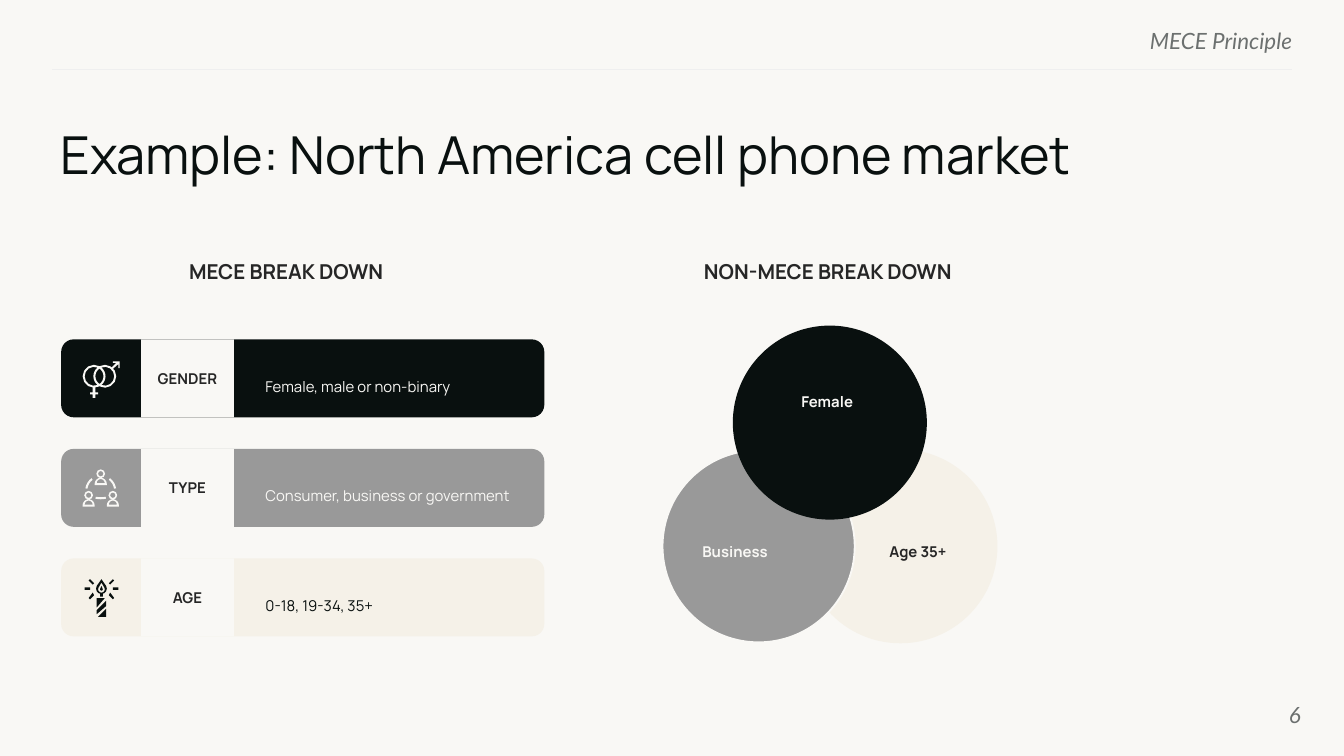
from math import cos, radians, sin

from pptx import Presentation
from pptx.dml.color import RGBColor
from pptx.enum.shapes import MSO_CONNECTOR, MSO_SHAPE as Kind
from pptx.enum.text import MSO_ANCHOR as Anchor, MSO_AUTO_SIZE as Fit, PP_ALIGN as Align
from pptx.oxml.xmlchemy import OxmlElement
from pptx.util import Pt

PX = 4572  # 200 px to the inch
INK, GREY, SAND, PAPER = "09100F", "999999", "F5F1E8", "F9F8F5"
DARK, MUTE, RULE = "262626", "6C706F", "EFEFEF"
hue = RGBColor.from_string

deck = Presentation()
deck.slide_width, deck.slide_height = 2000 * PX, 1125 * PX
slide = deck.slides.add_slide(deck.slide_layouts[5])
slide.background.fill.solid()
slide.background.fill.fore_color.rgb = hue(PAPER)
shapes = slide.shapes


def write(text, box=None, shape=None, size=8, color=DARK, font="Manrope", bold=False,
          italic=False, align=Align.CENTER, anchor=Anchor.TOP, pad=(14, 8), space=None, after=0):
    """Put text in the given shape, or in a new text box."""
    shape = shape or shapes.add_textbox(*[n * PX for n in box])
    frame = shape.text_frame
    frame.word_wrap, frame.auto_size = True, Fit.NONE
    frame.vertical_anchor = anchor
    frame.margin_left = frame.margin_right = pad[0] * PX
    frame.margin_top = frame.margin_bottom = pad[1] * PX
    para = frame.paragraphs[0]
    para.alignment, para.space_after = align, Pt(after)
    if space:
        para.line_spacing = space
    run = para.add_run()
    run.text = text
    run.font.name, run.font.size = font, Pt(size)
    run.font.bold, run.font.italic = bold, italic
    run.font.color.rgb = hue(color)


def arc(x, y, r, start=0, end=360, steps=8):
    """Points along an arc, in degrees clockwise from the right."""
    turns = [radians(start + (end - start) * i / steps) for i in range(steps + 1)]
    return [(x + r * cos(t), y + r * sin(t)) for t in turns]


# Title, header and page number
title = shapes.title
title.left, title.top, title.width, title.height = 90 * PX, 182 * PX, 1846 * PX, 102 * PX
write("Example: North America cell phone market", shape=title, size=28, color=INK,
      align=Align.LEFT, pad=(0, 0), after=10)
for text, box, anchor in [("MECE Principle", (1153, 40, 770, 36), Anchor.TOP),
                          ("6", (1816, 1020, 120, 86), Anchor.MIDDLE)]:
    write(text, box, size=12, color=MUTE, font="Lato", italic=True,
          align=Align.RIGHT, anchor=anchor, pad=(0, 0))
rule = shapes.add_connector(MSO_CONNECTOR.STRAIGHT, 78 * PX, 103 * PX, 1922 * PX, 103 * PX)
rule.line.color.rgb = hue(RULE)
rule.line.width = Pt(0.75)
rule._element.spPr.append(OxmlElement("a:effectLst"))

# Column headings
write("MECE BREAK DOWN", (229, 378, 394, 52), size=11, bold=True)
write("NON-MECE BREAK DOWN", (1004, 378, 456, 52), size=11, bold=True)

# Gender icon: two linked rings with a cross and an arrow
gender = [
    arc(156, 560, 17, -118, 118) + arc(140, 560, 17, 62, 298),
    arc(140, 560, 14, 69, 291) + arc(156, 560, 17, 230, 130),
    arc(156, 560, 14, 111, -111) + arc(140, 560, 17, -50, 50),
    arc(140, 560, 14, -55, 55) + arc(156, 560, 14, 125, 235),
    [(138, 577), (142, 577), (142, 584), (146, 584), (146, 587), (142, 587),
     (142, 592), (138, 592), (138, 587), (134, 587), (134, 584), (138, 584)],
    [(168, 549), (176, 542), (176, 548), (178, 548), (178, 538), (168, 538),
     (168, 540), (173, 540), (166, 547)]]

# Type icon: three people joined by curved dashes
kind = []
for x, y in [(150, 698), (132, 730), (168, 730)]:
    kind += [arc(x, y + 7, 6.5), arc(x, y + 7, 4),
             arc(x, y + 22, 9, 180, 360) + [(x + 9, y + 24), (x - 9, y + 24)],
             arc(x, y + 21, 6, 180, 360)]
for y, r, start, end in [(730, 20, 188, 233), (730, 20, 307, 352), (705, 35, 78, 102)]:
    kind.append(arc(150, y, r + 3, start, end, 4) + arc(150, y, r, end, start, 4))

# Age icon: flame, wick, striped candle and rays
age = [arc(151, 876, 8, -30, 210) + [(151, 862)],
       arc(151, 877, 5, -30, 210) + [(151, 867)],
       arc(151, 877, 2, -30, 210) + [(151, 872)],
       [(149, 884), (153, 884), (153, 888), (149, 888)],
       [(144, 890), (156, 890), (144, 904)],
       [(158, 894), (158, 902), (144, 914), (144, 908)],
       [(158, 906), (158, 918), (146, 918)]]
rays = [[(13, 882), (19, 890), (17, 892), (11, 886)],
        [(17, 874), (25, 874), (25, 878), (17, 878)],
        [(17, 862), (19, 864), (13, 870), (11, 868)]]
for side in (-1, 1):
    age += [[(151 + side * x, y) for x, y in ray] for ray in rays]

# Three category bars
forms = []
rows = [("GENDER", "Female, male or non-binary", INK, PAPER, gender),
        ("TYPE", "Consumer, business or government", GREY, PAPER, kind),
        ("AGE", "0-18, 19-34, 35+", SAND, INK, age)]
for i, (name, text, fill, color, icon) in enumerate(rows):
    top = 505 + 163 * i
    bar = shapes.add_shape(Kind.ROUNDED_RECTANGLE, 91 * PX, top * PX, 719 * PX, 116 * PX)
    bar.adjustments[0] = 0.16
    cell = shapes.add_shape(Kind.RECTANGLE, 210 * PX, top * PX, 138 * PX, 116 * PX)
    write(name, shape=cell, bold=True, anchor=Anchor.MIDDLE)
    write(text, (381, top + 30, 448, 42), color=color, align=Align.LEFT, space=1.7)
    outline = shapes.build_freeform(*[n * PX for n in icon[0][0]])
    for loop in icon:
        points = [(x * PX, y * PX) for x, y in loop]
        outline.move_to(*points[0])
        outline.add_line_segments(points[1:])
    forms += [(bar, fill, None), (cell, PAPER, None), (outline.convert_to_shape(), color, None)]

# Overlapping circles
circles = [(1197, 670, SAND, SAND), (986, 670, GREY, PAPER), (1092, 486, INK, INK)]
for left, top, fill, line in circles:
    circle = shapes.add_shape(Kind.OVAL, left * PX, top * PX, 286 * PX, 286 * PX)
    forms.append((circle, fill, line))
labels = [("Female", (1168, 576, 126, 42), PAPER),
          ("Business", (1020, 800, 148, 42), PAPER),
          ("Age 35+", (1281, 800, 170, 42), DARK)]
for text, box, color in labels:
    write(text, box, color=color, bold=True)

for form, fill, line in forms:
    form.shadow.inherit = False
    form.fill.solid()
    form.fill.fore_color.rgb = hue(fill)
    if line:
        form.line.color.rgb = hue(line)
        form.line.width = Pt(1)
    else:
        form.line.fill.background()

deck.save("out.pptx")
